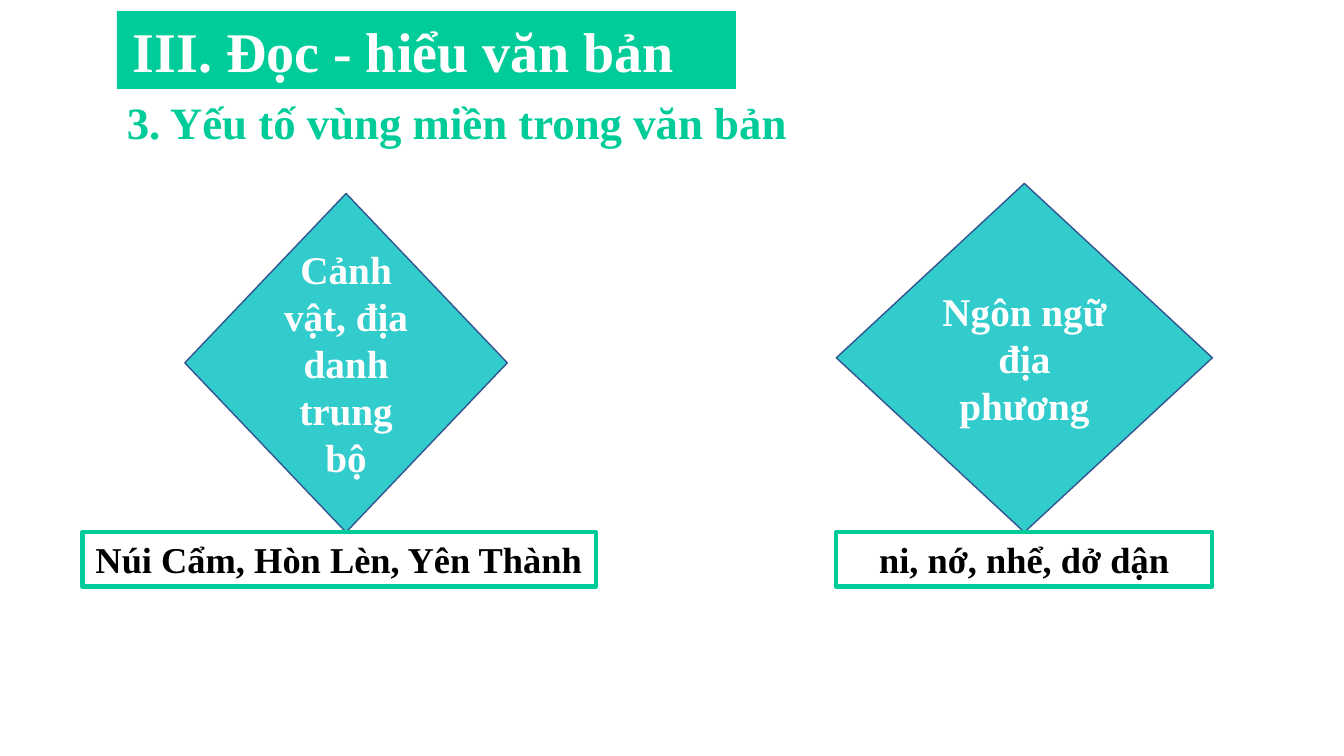
"""Build the slide on regional elements in the text."""
import pptx
import pptx.dml.color
import pptx.enum.shapes
import pptx.enum.text
import pptx.util

Pt = pptx.util.Pt
SHAPE = pptx.enum.shapes.MSO_SHAPE
ALIGN = pptx.enum.text.PP_ALIGN
ANCHOR = pptx.enum.text.MSO_ANCHOR

TITLE = "III. Đọc - hiểu văn bản"
SUBTITLE = "3. Yếu tố vùng miền trong văn bản"
TOPICS = [
    {"name": "Cảnh vật, địa danh trung bộ", "examples": "Núi Cẩm, Hòn Lèn, Yên Thành",
     "center": 247.2, "diamond": (230.4, 242), "box_width": 366.6},
    {"name": "Ngôn ngữ địa phương", "examples": "ni, nớ, nhể, dở dận",
     "center": 731.7, "diamond": (268.6, 249.2), "box_width": 268.6},
]
BOX_SHIFT = {0: -5, 1: 0}

THEME = {
    "font": "Times New Roman",
    "green": "00CC99", "teal": "33CCCC", "outline": "325491",
    "white": "FFFFFF", "black": "000000",
    "title": 40, "subtitle": 32, "topic": 28, "examples": 26,
}
HEAD_LEFT = 83.5
BOX_TOP, BOX_HEIGHT = 380.2, 38.8


def color(name):
    return pptx.dml.color.RGBColor.from_string(THEME[name])


def write(sp, text, size, ink, align, anchor=ANCHOR.TOP):
    tf = sp.text_frame
    tf.word_wrap = True
    tf.vertical_anchor = anchor
    tf.text = text
    p = tf.paragraphs[0]
    p.alignment = align
    font = p.runs[0].font
    font.name, font.size, font.bold = THEME["font"], Pt(THEME[size]), True
    font.color.rgb = color(ink)


def add_shape(slide, kind, box, fill=None, line=None, width=1):
    sp = slide.shapes.add_shape(kind, *map(Pt, box))
    sp.shadow.inherit = False
    if fill:
        sp.fill.solid()
        sp.fill.fore_color.rgb = color(fill)
    else:
        sp.fill.background()
    if line:
        sp.line.color.rgb = color(line)
        sp.line.width = Pt(width)
    else:
        sp.line.fill.background()
    return sp


def add_heading(slide):
    sp = slide.shapes.add_textbox(*map(Pt, (HEAD_LEFT, 64.1, 519.1, 46)))
    write(sp, SUBTITLE, "subtitle", "green", ALIGN.JUSTIFY)
    sp = add_shape(slide, SHAPE.RECTANGLE, (HEAD_LEFT, 8, 442.1, 55.6), "green")
    write(sp, TITLE, "title", "white", ALIGN.JUSTIFY)
    sp.text_frame.margin_left = Pt(11.5)


def add_topic(slide, topic, shift):
    width, height = topic["diamond"]
    box = (topic["center"] - width / 2, BOX_TOP - height, width, height)
    sp = add_shape(slide, SHAPE.DIAMOND, box, "teal", "outline")
    write(sp, topic["name"], "topic", "white", ALIGN.CENTER, ANCHOR.MIDDLE)

    width = topic["box_width"]
    box = (topic["center"] + shift - width / 2, BOX_TOP, width, BOX_HEIGHT)
    sp = add_shape(slide, SHAPE.RECTANGLE, box, line="green", width=3)
    write(sp, topic["examples"], "examples", "black", ALIGN.CENTER)


def main():
    prs = pptx.Presentation()
    prs.slide_width, prs.slide_height = Pt(960), Pt(540)
    slide = prs.slides.add_slide(prs.slide_layouts[6])
    add_heading(slide)
    for i, topic in enumerate(TOPICS):
        add_topic(slide, topic, BOX_SHIFT[i])
    prs.save("out.pptx")


if __name__ == "__main__":
    main()
